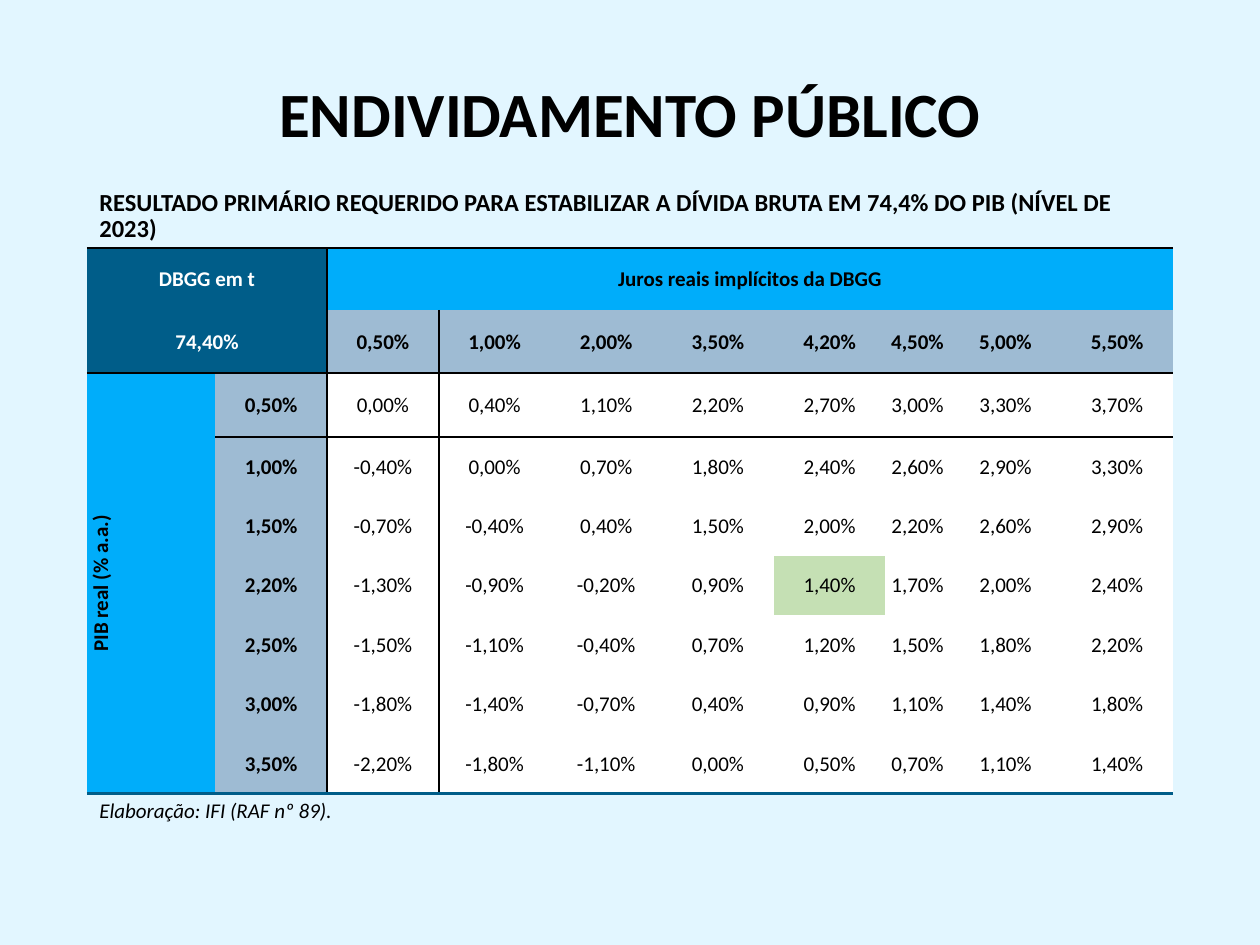
from lxml import etree
from pptx import Presentation
from pptx.dml.color import RGBColor
from pptx.enum.text import MSO_ANCHOR, PP_ALIGN
from pptx.oxml.ns import qn
from pptx.util import Inches, Pt

CENTER, LEFT = PP_ALIGN.CENTER, PP_ALIGN.LEFT
MIDDLE, TOP = MSO_ANCHOR.MIDDLE, MSO_ANCHOR.TOP
NO_STYLE_NO_GRID = "{2D5ABB26-0587-4C30-8999-92F81FD0307C}"

COLORS = {
    "page": "E2F6FF", "black": "000000", "white": "FFFFFF", "navy": "005D89",
    "bright": "00ADFA", "steel": "9EBBD3", "green": "C5E0B4",
}

# text, top, height, alignment, anchor, space before, font
TEXTS = [
    ("ENDIVIDAMENTO PÚBLICO", 0.4, 1.06, CENTER, MIDDLE, 0,
     {"size": Pt(36), "bold": True}),
    ("RESULTADO PRIMÁRIO REQUERIDO PARA ESTABILIZAR A DÍVIDA BRUTA EM 74,4% "
     "DO PIB (NÍVEL DE 2023)", 1.46, 0.5, LEFT, TOP, 10,
     {"size": Pt(14), "bold": True}),
    ("Elaboração: IFI (RAF nº 89).", 6.3, 0.5, LEFT, TOP, 10,
     {"size": Pt(12), "italic": True}),
]

DEBT_LABEL, DEBT_LEVEL = "DBGG em t", "74,40%"
RATES_LABEL, GROWTH_LABEL = "Juros reais implícitos da DBGG", "PIB real (% a.a.)"
RATES = ["0,50%", "1,00%", "2,00%", "3,50%", "4,20%", "4,50%", "5,00%", "5,50%"]
RESULTS = {
    "0,50%": ["0,00%", "0,40%", "1,10%", "2,20%", "2,70%", "3,00%", "3,30%", "3,70%"],
    "1,00%": ["-0,40%", "0,00%", "0,70%", "1,80%", "2,40%", "2,60%", "2,90%", "3,30%"],
    "1,50%": ["-0,70%", "-0,40%", "0,40%", "1,50%", "2,00%", "2,20%", "2,60%", "2,90%"],
    "2,20%": ["-1,30%", "-0,90%", "-0,20%", "0,90%", "1,40%", "1,70%", "2,00%", "2,40%"],
    "2,50%": ["-1,50%", "-1,10%", "-0,40%", "0,70%", "1,20%", "1,50%", "1,80%", "2,20%"],
    "3,00%": ["-1,80%", "-1,40%", "-0,70%", "0,40%", "0,90%", "1,10%", "1,40%", "1,80%"],
    "3,50%": ["-2,20%", "-1,80%", "-1,10%", "0,00%", "0,50%", "0,70%", "1,10%", "1,40%"],
}
BASE_CASE = ("2,20%", "4,20%")

HEADER_ROWS, HEADER_COLS = 2, 2
ROWS, COLS = HEADER_ROWS + len(RESULTS), HEADER_COLS + len(RATES)
LEFT_EDGE, WIDTH = 0.69, 8.62
TABLE_TOP, TABLE_HEIGHT = 1.97, 4.33
GROWTH_WIDTH, NARROW_WIDTH, NARROW_COL = 1.02, 0.51, 7
ROW_SHARES = [0.49, 0.5, 0.51, 0.47, 0.47, 0.47, 0.47, 0.47, 0.48]
CELL_MARGINS = {"margin_left": 0.01, "margin_right": 0.01,
                "margin_top": 0.01, "margin_bottom": 0}


def color(name):
    return RGBColor.from_string(COLORS[name])


def write(frame, text, align, tone="black", **font):
    para = frame.paragraphs[0]
    para.alignment = align
    span = para.add_run()
    span.text = text
    span.font.name = "Calibri"
    span.font.color.rgb = color(tone)
    for name, value in font.items():
        setattr(span.font, name, value)
    return para


def add_text(page, text, top, height, align, anchor, before, font):
    box = page.shapes.add_textbox(
        Inches(LEFT_EDGE), Inches(top), Inches(WIDTH), Inches(height))
    frame = box.text_frame
    frame.word_wrap = True
    frame.vertical_anchor = anchor
    para = write(frame, text, align, **font)
    para.line_spacing = 0.9
    para.space_before = Pt(before)


def cell_look(row, col):
    """Return fill, text colour and boldness for a table position."""
    if row < HEADER_ROWS and col < HEADER_COLS:
        return "navy", "white", True
    if row == 0 or col == 0:
        return "bright", "black", True
    if row < HEADER_ROWS or col < HEADER_COLS:
        return "steel", "black", True
    place = (list(RESULTS)[row - HEADER_ROWS], RATES[col - HEADER_COLS])
    return ("green" if place == BASE_CASE else "white"), "black", False


def add_borders(cell, row, col):
    """Rule off the table's top, its header, its row labels and its bottom."""
    right, bottom = col + cell.span_width, row + cell.span_height
    thin, thick = ("black", 1), ("navy", 1.5)
    across = {0: thin, HEADER_ROWS: thin, ROWS: thick}
    edges = {
        "L": thin if col == HEADER_COLS else None,
        "R": thin if right == HEADER_COLS else None,
        "T": across.get(row),
        "B": across.get(bottom),
    }
    properties = cell._tc.get_or_add_tcPr()
    for side, edge in edges.items():
        if edge:
            tone, points = edge
            line = etree.SubElement(properties, qn(f"a:ln{side}"), w=str(Pt(points)))
            fill = etree.SubElement(line, qn("a:solidFill"))
            etree.SubElement(fill, qn("a:srgbClr"), val=COLORS[tone])


def add_results_table(page):
    frame = page.shapes.add_table(
        ROWS, COLS, Inches(LEFT_EDGE), Inches(TABLE_TOP),
        Inches(WIDTH), Inches(TABLE_HEIGHT))
    table = frame.table
    table.first_row = table.horz_banding = False
    table._tbl.tblPr.find(qn("a:tableStyleId")).text = NO_STYLE_NO_GRID

    regular = (WIDTH - GROWTH_WIDTH - NARROW_WIDTH) / (COLS - 2)
    special = {0: GROWTH_WIDTH, NARROW_COL: NARROW_WIDTH}
    for index, column in enumerate(table.columns):
        column.width = Inches(special.get(index, regular))
    for share, row in zip(ROW_SHARES, table.rows):
        row.height = Inches(TABLE_HEIGHT * share / sum(ROW_SHARES))

    last_row, last_col = ROWS - 1, COLS - 1
    for start, end in [((0, 0), (0, 1)), ((0, 2), (0, last_col)),
                       ((1, 0), (1, 1)), ((2, 0), (last_row, 0))]:
        table.cell(*start).merge(table.cell(*end))

    content = [[DEBT_LABEL, "", RATES_LABEL] + [""] * (len(RATES) - 1),
               [DEBT_LEVEL, ""] + RATES]
    content += [["", growth] + values for growth, values in RESULTS.items()]
    content[HEADER_ROWS][0] = GROWTH_LABEL

    for row, texts in enumerate(content):
        for col, text in enumerate(texts):
            cell = table.cell(row, col)
            fill, tone, bold = cell_look(row, col)
            add_borders(cell, row, col)
            cell.fill.solid()
            cell.fill.fore_color.rgb = color(fill)
            cell.vertical_anchor = MIDDLE
            for name, value in CELL_MARGINS.items():
                setattr(cell, name, Inches(value))
            if text:
                write(cell.text_frame, text, CENTER, tone, size=Pt(12), bold=bold)
    table.cell(HEADER_ROWS, 0)._tc.tcPr.set("vert", "vert270")


def main():
    deck = Presentation()
    deck.slide_width, deck.slide_height = Inches(10), Inches(7.5)
    page = deck.slides.add_slide(deck.slide_layouts[6])
    page.background.fill.solid()
    page.background.fill.fore_color.rgb = color("page")
    for text in TEXTS:
        add_text(page, *text)
    add_results_table(page)
    deck.save("out.pptx")


if __name__ == "__main__":
    main()
